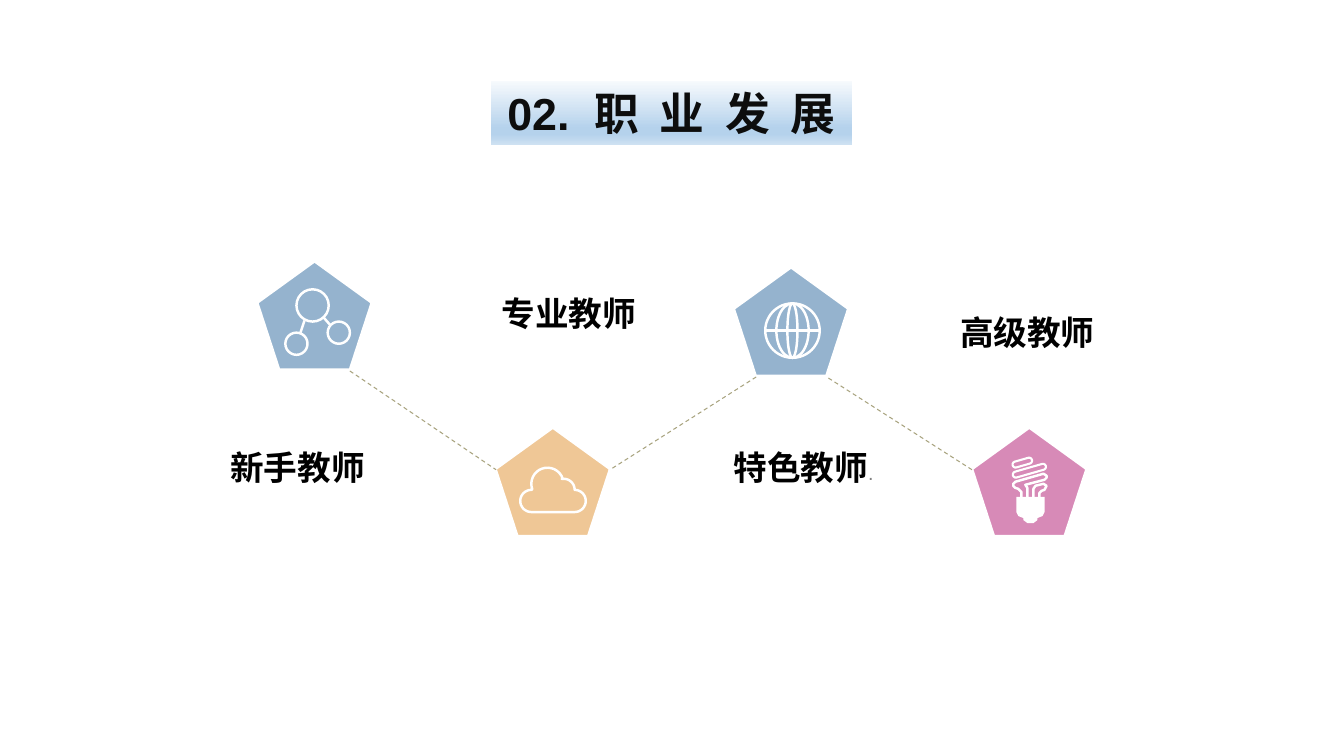
from dataclasses import dataclass
from math import cos, radians, sin

from lxml import etree
from pptx import Presentation
from pptx import util as u
from pptx.dml.color import RGBColor
from pptx.enum import dml, shapes, text
from pptx.oxml import ns

WHITE = RGBColor(0xFF, 0xFF, 0xFF)
BLACK = RGBColor(0x00, 0x00, 0x00)
INK = RGBColor(0x0D, 0x0D, 0x0D)
GREY = RGBColor(0x80, 0x80, 0x80)
BLUE = RGBColor(0x95, 0xB3, 0xCE)
ORANGE = RGBColor(0xEF, 0xC7, 0x96)
PINK = RGBColor(0xD7, 0x8A, 0xB7)
OLIVE = RGBColor(0xA8, 0xA3, 0x7E)
BANNER_STOPS = [
    (0, RGBColor(0xF7, 0xFA, 0xFD)),
    (74, RGBColor(0xB5, 0xD2, 0xEC)),
    (83, RGBColor(0xB5, 0xD2, 0xEC)),
    (100, RGBColor(0xCE, 0xE1, 0xF2)),
]
FONT = "Arial"
ICON_STROKE = 1.75
Point = tuple[float, float]


@dataclass
class Stage:
    name: str
    label_left: float
    label_top: float
    label_width: float
    pentagon_top: float
    color: RGBColor
    suffix: str = ""


@dataclass
class Ring:
    x: float
    y: float
    rx: float
    ry: float


STAGES = [
    Stage("新手教师", 1.52, 4.38, 2.86, 2.59, BLUE),
    Stage("专业教师", 4.07, 2.86, 3.14, 4.24, ORANGE),
    Stage("特色教师", 6.54, 4.38, 2.86, 2.65, BLUE, "."),
    Stage("高级教师", 8.76, 3.05, 2.86, 4.24, PINK),
]
STAGE_LINKS = [
    ((3.47, 3.68), (4.92, 4.66)),
    ((7.5, 3.74), (6.05, 4.66)),
    ((9.64, 4.66), (8.2, 3.74)),
]
NETWORK_NODES = [
    Ring(3.1, 3.03, 0.16, 0.16),
    Ring(2.94, 3.41, 0.11, 0.11),
    Ring(3.36, 3.3, 0.11, 0.11),
]
NETWORK_LINKS = [((3.02, 3.18), (2.98, 3.3)), ((3.21, 3.15), (3.28, 3.23))]
GLOBE_RINGS = [Ring(7.86, 3.28, rx, 0.27) for rx in (0.27, 0.16, 0.05)]
GLOBE_EQUATOR = ((7.59, 3.28), (8.13, 3.28))
CLOUD_ARCS = [
    (5.7, 4.97, 0.11, 90, -90),
    (5.59, 4.86, 0.11, 0, -100),
    (5.43, 4.8, 0.16, -20, -200),
    (5.27, 4.97, 0.11, -90, -270),
]
BULB_COILS = [(10.14, 4.59, 0.2), (10.21, 4.67, 0.34)]
BULB_TUBES = [
    [(10.13, 4.93), (10.13, 4.88), (10.1, 4.85), (10.07, 4.84), (10.05, 4.82),
     (10.05, 4.8), (10.07, 4.78), (10.35, 4.7), (10.38, 4.72), (10.38, 4.74),
     (10.36, 4.76), (10.17, 4.81), (10.19, 4.84), (10.19, 4.93)],
    [(10.25, 4.93), (10.25, 4.85), (10.27, 4.82), (10.35, 4.8), (10.38, 4.82),
     (10.36, 4.86), (10.33, 4.87), (10.31, 4.89), (10.31, 4.93)],
]
BULB_BASE = [
    (10.08, 4.93), (10.36, 4.93), (10.36, 5.08), (10.34, 5.12), (10.29, 5.14),
    (10.29, 5.16), (10.25, 5.19), (10.19, 5.19), (10.15, 5.16), (10.15, 5.14),
    (10.1, 5.12), (10.08, 5.08),
]


def add_run(paragraph, words: str, size: float, color: RGBColor,
            bold: bool = True, spacing: int = 0) -> None:
    run = paragraph.add_run()
    run.text = words
    run.font.name = FONT
    run.font.size = u.Pt(size)
    run.font.bold = bold
    run.font.color.rgb = color
    if spacing:
        run.font._element.set("spc", str(spacing))


def outline(shape, width: float = ICON_STROKE) -> None:
    shape.shadow.inherit = False
    shape.line.color.rgb = WHITE
    shape.line.width = u.Pt(width)


def add_line(slide, start: Point, end: Point, color: RGBColor, width: float,
             dashed: bool = False) -> None:
    link = slide.shapes.add_connector(
        shapes.MSO_CONNECTOR.STRAIGHT, *(u.Inches(v) for v in (*start, *end)))
    link.line.color.rgb = color
    link.line.width = u.Pt(width)
    if dashed:
        link.line.dash_style = dml.MSO_LINE.DASH
    etree.SubElement(link._element.spPr, ns.qn("a:effectLst"))


def add_ring(slide, ring: Ring) -> None:
    oval = slide.shapes.add_shape(
        shapes.MSO_SHAPE.OVAL, u.Inches(ring.x - ring.rx), u.Inches(ring.y - ring.ry),
        u.Inches(2 * ring.rx), u.Inches(2 * ring.ry))
    oval.fill.background()
    outline(oval)


def add_path(slide, points: list[Point], closed: bool, filled: bool = False) -> None:
    first, *rest = [(u.Inches(x), u.Inches(y)) for x, y in points]
    builder = slide.shapes.build_freeform(*first)
    builder.add_line_segments(rest, close=closed)
    path = builder.convert_to_shape()
    outline(path)
    if filled:
        path.fill.solid()
        path.fill.fore_color.rgb = WHITE
        path.line.fill.background()
    else:
        path.fill.background()


def add_pentagon(slide, index: int, stage: Stage) -> None:
    pentagon = slide.shapes.add_shape(
        shapes.MSO_SHAPE.REGULAR_PENTAGON, u.Inches(2.55 + 2.363 * index),
        u.Inches(stage.pentagon_top), u.Inches(1.14), u.Inches(1.08))
    pentagon.fill.solid()
    pentagon.fill.fore_color.rgb = stage.color
    outline(pentagon, 2)


def add_label(slide, stage: Stage) -> None:
    label = slide.shapes.add_textbox(
        u.Inches(stage.label_left), u.Inches(stage.label_top),
        u.Inches(stage.label_width), u.Inches(0.5))
    frame = label.text_frame
    frame.word_wrap = True
    frame.auto_size = text.MSO_AUTO_SIZE.SHAPE_TO_FIT_TEXT
    paragraph = frame.paragraphs[0]
    paragraph.alignment = text.PP_ALIGN.CENTER
    add_run(paragraph, stage.name, 24, BLACK)
    if stage.suffix:
        add_run(paragraph, stage.suffix, 14, GREY, bold=False)


def add_icons(slide) -> None:
    for ring in NETWORK_NODES + GLOBE_RINGS:
        add_ring(slide, ring)
    for start, end in [*NETWORK_LINKS, GLOBE_EQUATOR]:
        add_line(slide, start, end, WHITE, ICON_STROKE)
    cloud = [
        (x + r * cos(radians(a + (b - a) * step / 16)),
         y + r * sin(radians(a + (b - a) * step / 16)))
        for x, y, r, a, b in CLOUD_ARCS for step in range(17)]
    add_path(slide, cloud, closed=True)
    for x, y, length in BULB_COILS:
        coil = slide.shapes.add_shape(
            shapes.MSO_SHAPE.ROUNDED_RECTANGLE, u.Inches(x - length / 2),
            u.Inches(y - 0.03), u.Inches(length), u.Inches(0.06))
        coil.adjustments[0] = 0.5
        coil.rotation = -16
        coil.fill.background()
        outline(coil, 1.5)
    for tube in BULB_TUBES:
        add_path(slide, tube, closed=False)
    add_path(slide, BULB_BASE, closed=True, filled=True)


def add_banner(slide) -> None:
    banner = slide.shapes.add_shape(
        shapes.MSO_SHAPE.RECTANGLE, u.Inches(4.87), u.Inches(0.8),
        u.Inches(3.58), u.Inches(0.64))
    banner.shadow.inherit = False
    banner.line.fill.background()
    banner.fill.gradient()
    banner.fill.gradient_angle = 270
    stops = banner._element.spPr.find(".//" + ns.qn("a:gsLst"))
    for stop in list(stops):
        stops.remove(stop)
    for percent, color in BANNER_STOPS:
        stop = etree.SubElement(stops, ns.qn("a:gs"), pos=str(percent * 1000))
        etree.SubElement(stop, ns.qn("a:srgbClr"), val=str(color))
    frame = banner.text_frame
    frame.word_wrap = False
    frame.margin_left = frame.margin_right = 0
    title = frame.paragraphs[0]
    title.alignment = text.PP_ALIGN.CENTER
    for words, spacing in [("02.", 0), (" ", 890), ("职 业 发 ", 370), ("展", 0)]:
        add_run(title, words, 32, INK, spacing=spacing)


def main() -> None:
    deck = Presentation()
    deck.slide_width, deck.slide_height = u.Inches(13.33), u.Inches(7.5)
    slide = deck.slides.add_slide(deck.slide_layouts[6])
    for index, stage in enumerate(STAGES):
        add_pentagon(slide, index, stage)
    add_icons(slide)
    for start, end in STAGE_LINKS:
        add_line(slide, start, end, OLIVE, 0.75, dashed=True)
    for stage in STAGES:
        add_label(slide, stage)
    add_banner(slide)
    deck.save("out.pptx")


if __name__ == "__main__":
    main()
